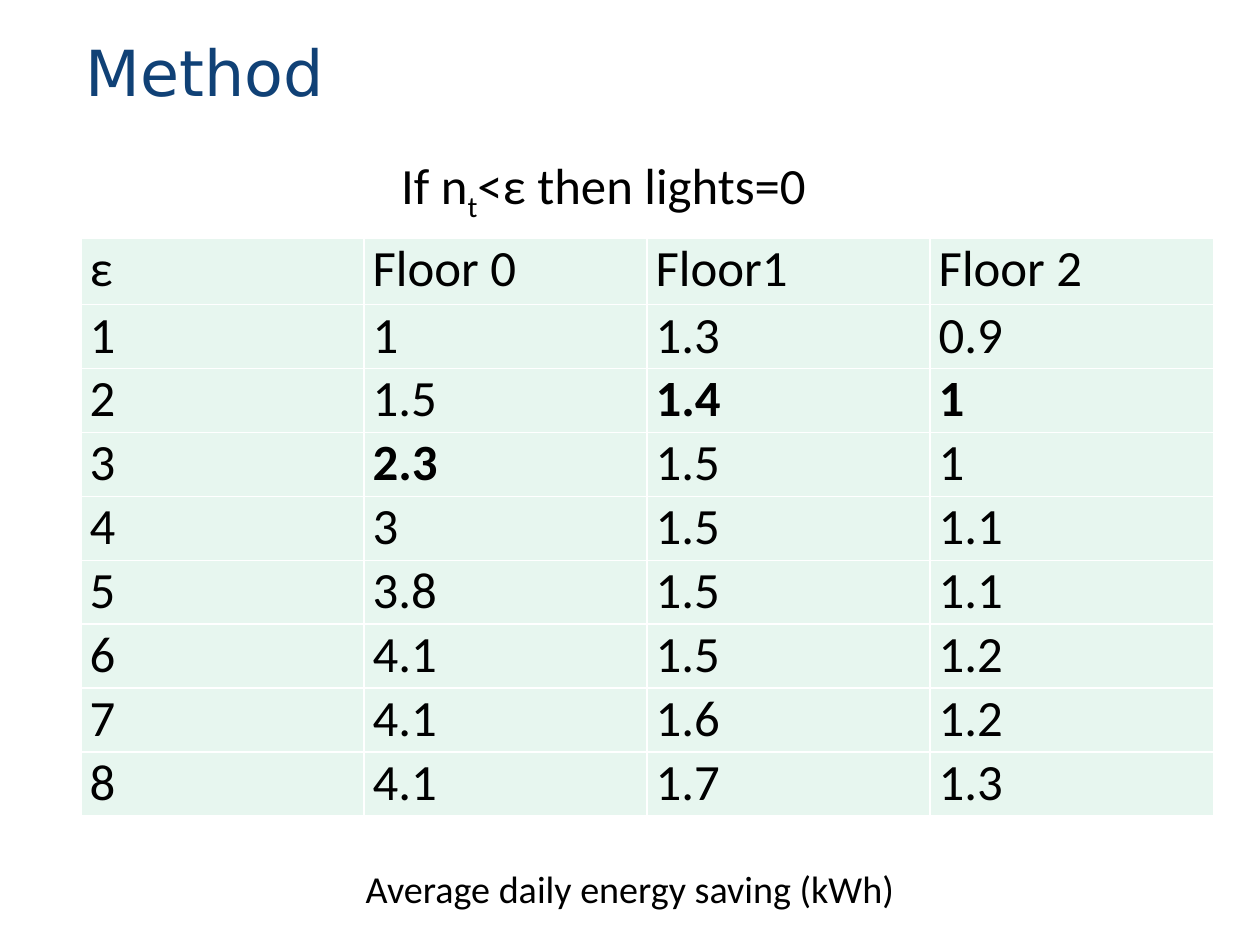
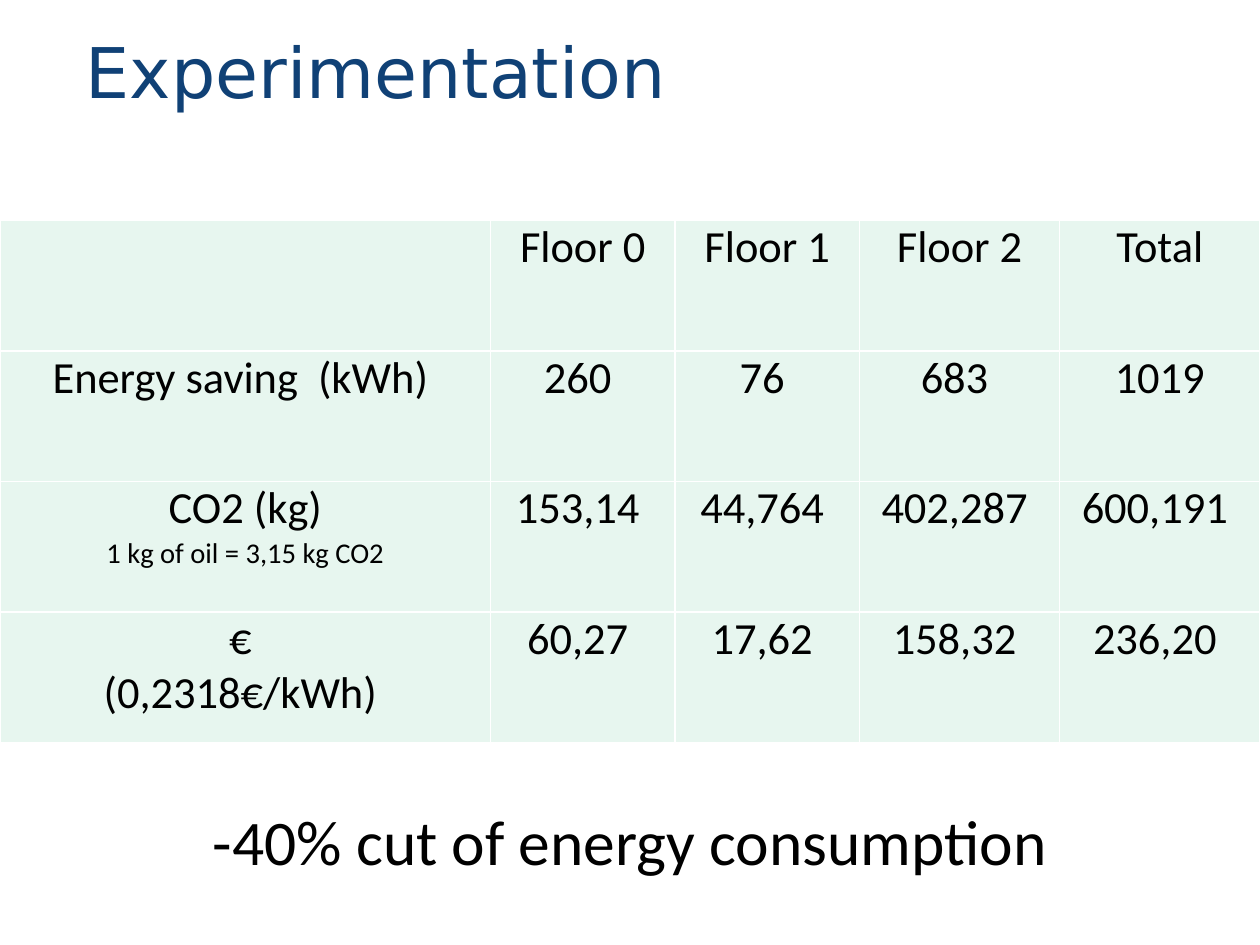
from lxml import etree
from pptx import Presentation
from pptx.dml.color import RGBColor
from pptx.enum.text import MSO_ANCHOR, MSO_AUTO_SIZE, PP_ALIGN
from pptx.oxml.ns import qn
from pptx.util import Cm, Pt

NAVY = RGBColor(0x10, 0x41, 0x76)
BLACK = RGBColor(0x00, 0x00, 0x00)
MINT = RGBColor(0xE7, 0xF6, 0xEF)
WHITE = RGBColor(0xFF, 0xFF, 0xFF)

LEFT, CENTER = PP_ALIGN.LEFT, PP_ALIGN.CENTER
MIDDLE = MSO_ANCHOR.MIDDLE
NO_FIT, GROW = MSO_AUTO_SIZE.NONE, MSO_AUTO_SIZE.SHAPE_TO_FIT_TEXT

TITLE_ONLY = 5
TITLE_FONT = {"name": "DejaVu Sans", "bold": False}
BODY_FONT = {"name": "Calibri", "bold": False}
CELL_MARGINS = {
    "margin_left": Cm(0.19),
    "margin_right": Cm(0.19),
    "margin_top": 0,
    "margin_bottom": 0,
}


def apply(target, values):
    for name, value in values.items():
        setattr(target, name, value)


class Slides:
    def __init__(self, width, height):
        self.deck = Presentation()
        self.deck.slide_width = Cm(width)
        self.deck.slide_height = Cm(height)
        self.slide = None

    def add_text(self, frame, paragraphs, size, align=LEFT, font=BODY_FONT, color=BLACK):
        for index, spans in enumerate(paragraphs):
            para = frame.paragraphs[0] if index == 0 else frame.add_paragraph()
            para.alignment = align
            for text, changes in spans:
                span = para.add_run()
                span.text = text
                apply(span.font, {**font, "size": Pt(size), **changes})
                span.font.color.rgb = color

    def start(self, title, size):
        self.slide = self.deck.slides.add_slide(self.deck.slide_layouts[TITLE_ONLY])
        box = self.slide.shapes.title
        apply(box, {"left": Cm(1.65), "top": Cm(0.75), "width": Cm(20.95), "height": Cm(1.65)})
        frame = box.text_frame
        apply(frame, {"vertical_anchor": MIDDLE, "auto_size": NO_FIT, "word_wrap": True})
        self.add_text(frame, [[(title, {})]], size, LEFT, TITLE_FONT, NAVY)

    def caption(self, left, top, width, height, spans, size, wrap=True):
        box = self.slide.shapes.add_textbox(Cm(left), Cm(top), Cm(width), Cm(height))
        frame = box.text_frame
        apply(frame, {"word_wrap": wrap, "auto_size": GROW})
        self.add_text(frame, [spans], size, CENTER)
        return frame

    def border(self, cell):
        properties = cell._tc.get_or_add_tcPr()
        for side in ("a:lnL", "a:lnR", "a:lnT", "a:lnB"):
            line = etree.SubElement(properties, qn(side), w=str(Pt(1)))
            fill = etree.SubElement(line, qn("a:solidFill"))
            etree.SubElement(fill, qn("a:srgbClr"), val=str(WHITE))

    def table(self, left, top, widths, heights, rows, size, align=LEFT, bold=()):
        frame = self.slide.shapes.add_table(
            len(heights), len(widths), Cm(left), Cm(top), Cm(sum(widths)), Cm(sum(heights))
        )
        table = frame.table
        apply(table, {"first_row": False, "horz_banding": False})
        for column, width in zip(table.columns, widths):
            column.width = Cm(width)
        for row, height in zip(table.rows, heights):
            row.height = Cm(height)
        for y, values in enumerate(rows):
            for x, value in enumerate(values):
                cell = table.cell(y, x)
                apply(cell, CELL_MARGINS)
                self.border(cell)
                cell.fill.solid()
                cell.fill.fore_color.rgb = MINT
                paragraphs = value if isinstance(value, list) else [(value, {})]
                changes = {"bold": (y, x) in bold}
                self.add_text(
                    cell.text_frame,
                    [[(text, {**changes, **extra})] for text, extra in paragraphs],
                    size,
                    align,
                )


def method(slides):
    slides.start("Method", 40)
    savings = [
        ("ε", "Floor 0", "Floor1", "Floor 2"),
        ("1", "1", "1.3", "0.9"),
        ("2", "1.5", "1.4", "1"),
        ("3", "2.3", "1.5", "1"),
        ("4", "3", "1.5", "1.1"),
        ("5", "3.8", "1.5", "1.1"),
        ("6", "4.1", "1.5", "1.2"),
        ("7", "4.1", "1.6", "1.2"),
        ("8", "4.1", "1.7", "1.3"),
    ]
    slides.table(
        1.8, 5.3, [6.29] * 4, [1.47] + [1.42] * 8, savings, 32,
        bold={(2, 2), (2, 3), (3, 1)},
    )
    rule = slides.caption(
        8.6, 3.3, 9.63, 1.63,
        [("If n", {}), ("t", {}), ("<ε then lights=0", {})], 32, wrap=False,
    )
    subscript = rule.paragraphs[0].runs[1]
    subscript._r.get_or_add_rPr().set("baseline", "-25000")
    slides.caption(0, 19.1, 28, 1.27, [("Average daily energy saving (kWh)", {})], 24)


def experimentation(slides):
    slides.start("Experimentation", 44)
    results = [
        ("", "Floor 0", "Floor 1", "Floor 2", "Total"),
        ("Energy saving  (kWh) ", "260 ", "76 ", "683 ", "1019"),
        (
            [("CO2 (kg)", {}), ("1 kg of oil = 3,15 kg CO2", {"size": Pt(18)})],
            "153,14 ", "44,764 ", "402,287 ", "600,191 ",
        ),
        (
            [("€ ", {}), ("(0,2318€/kWh) ", {})],
            "60,27 ", "17,62 ", "158,32 ", "236,20 ",
        ),
    ]
    slides.table(0, 4.9, [10.9, 4.1, 4.1, 4.45, 4.45], [2.9] * 4, results, 28, CENTER)
    slides.caption(0.4, 17.7, 27.2, 1.96, [("-40% cut of energy consumption", {})], 40)


def main():
    slides = Slides(28, 21)
    method(slides)
    experimentation(slides)
    slides.deck.save("out.pptx")


if __name__ == "__main__":
    main()
